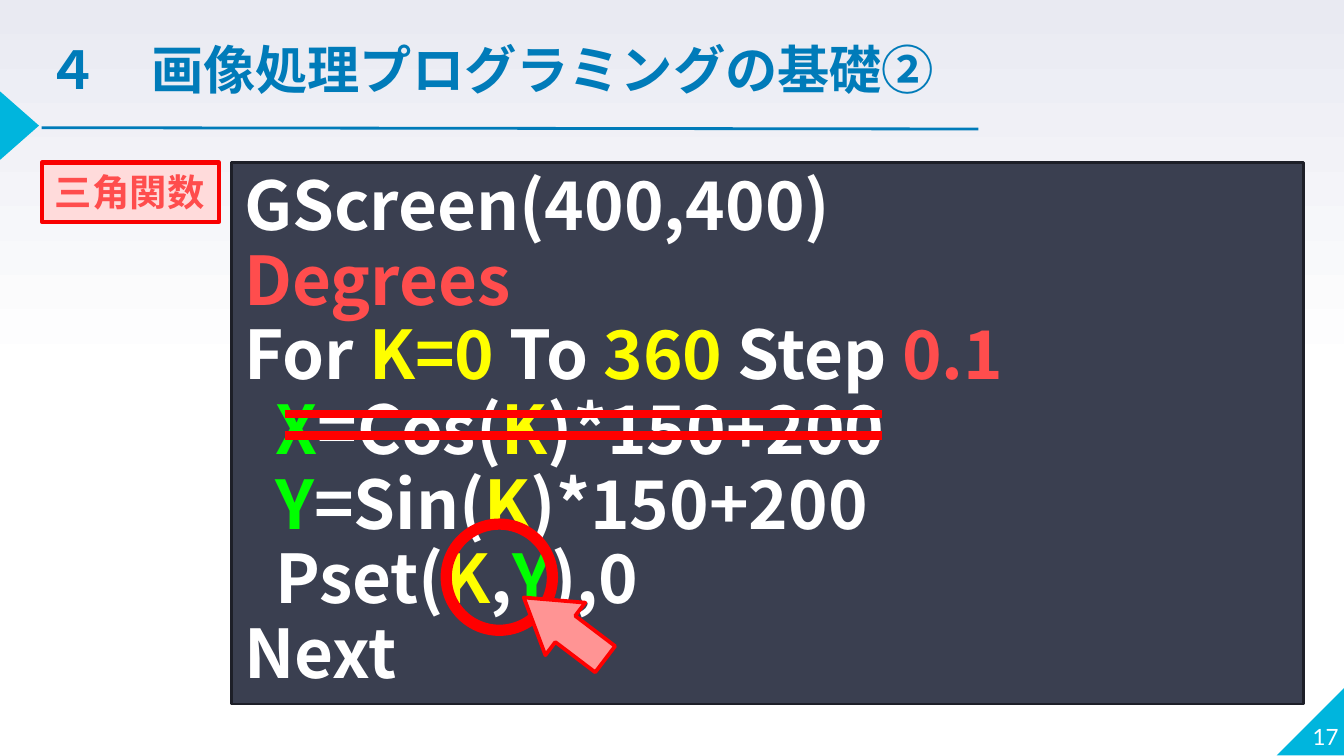
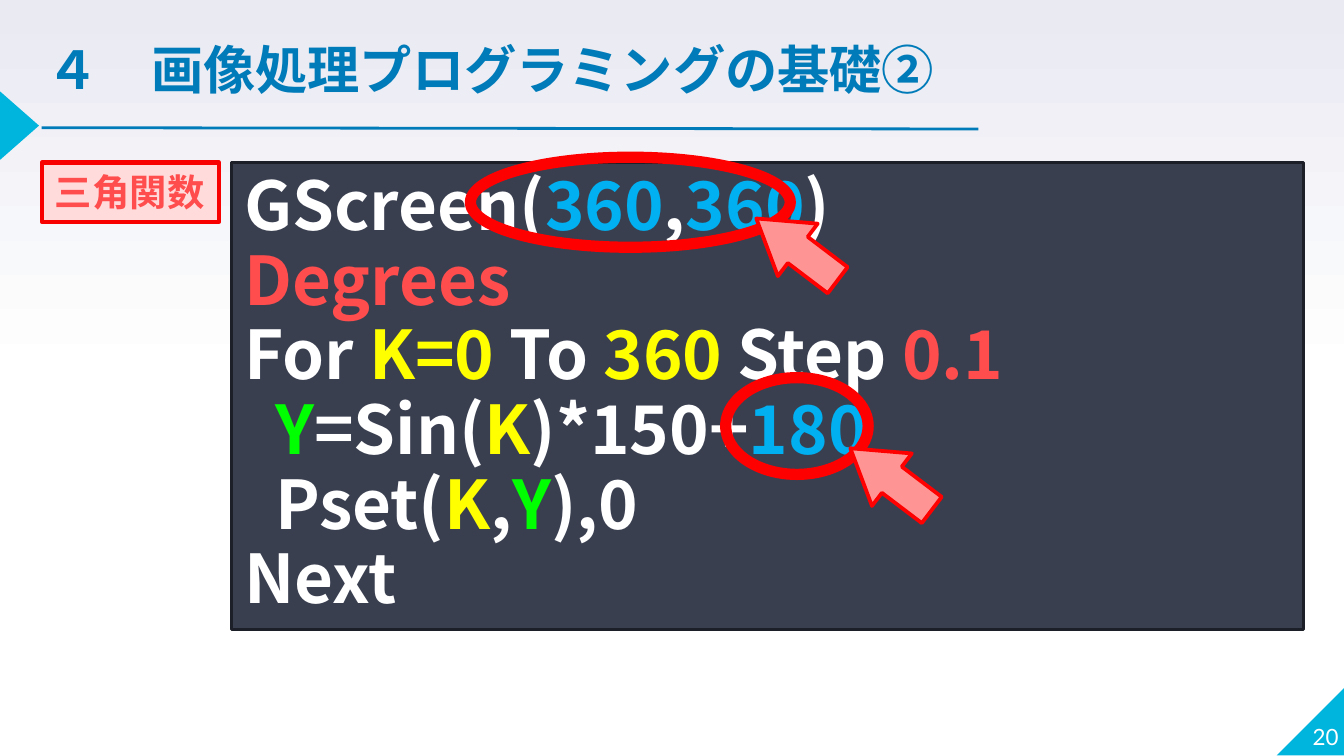
from copy import deepcopy

from lxml import etree
from pptx import Presentation
from pptx.dml.color import RGBColor
from pptx.enum.shapes import MSO_CONNECTOR, MSO_SHAPE
from pptx.enum.text import MSO_ANCHOR, MSO_AUTO_SIZE, PP_ALIGN
from pptx.oxml.ns import qn
from pptx.util import Inches, Pt

RECT, ELLIPSE = MSO_SHAPE.RECTANGLE, MSO_SHAPE.OVAL
ARROW = MSO_SHAPE.RIGHT_ARROW
CORNER, MARKER = MSO_SHAPE.RIGHT_TRIANGLE, MSO_SHAPE.ISOSCELES_TRIANGLE
STRAIGHT = MSO_CONNECTOR.STRAIGHT
LEFT, RIGHT = PP_ALIGN.LEFT, PP_ALIGN.RIGHT
BOTTOM, TOP = MSO_ANCHOR.BOTTOM, MSO_ANCHOR.TOP
GROW = MSO_AUTO_SIZE.SHAPE_TO_FIT_TEXT

COLORS = {
    "white": "FFFFFF", "sky": "E9EAF2", "cyan": "00B5DD", "title": "007BB9",
    "panel": "3A3F50", "panel_edge": "1D1F28", "tag": "FFDBDB",
    "tag_edge": "F90000", "coral": "FF4D4D", "yellow": "FFFF00",
    "green": "00FF00", "blue": "00B0F0", "red": "FF0000", "arrow": "FF9494",
}
JP = "Noto Sans CJK JP"
FONTS = {
    "title": {"name": JP, "size": Pt(28), "bold": True},
    "code": {"name": JP, "size": Pt(36), "bold": True},
    "tag": {"name": JP, "size": Pt(20), "bold": True},
    "page": {"name": "Lato", "size": Pt(12)},
}
FLUSH = dict.fromkeys(
    ("margin_left", "margin_top", "margin_right", "margin_bottom"), 0)
LINE_PT = 40
INDENT = Inches(0.23)

DEGREES = (False, [("Degrees", "coral")])
LOOP = (False, [("For ", "white"), ("K=0", "yellow"), (" To ", "white"),
                ("360", "yellow"), (" Step ", "white"), ("0.1", "coral")])
PSET = (True, [("Pset(", "white"), ("K", "yellow"), (",", "white"),
               ("Y", "green"), ("),0", "white")])
NEXT = (False, [("Next", "white")])


def assign(name, func, *tail):
    return (True, [(name, "green"), (f"={func}(", "white"),
                   ("K", "yellow"), *tail])


def rgb(name):
    return RGBColor.from_string(COLORS[name])


def apply(obj, values):
    for key, value in values.items():
        setattr(obj, key, value)


def add_shape(shapes, kind, box, fill=None, edge=None, width=0):
    sp = shapes.add_shape(kind, *map(Inches, box))
    sp.shadow.inherit = False
    if fill:
        sp.fill.solid()
        sp.fill.fore_color.rgb = rgb(fill)
    else:
        sp.fill.background()
    if edge:
        sp.line.color.rgb = rgb(edge)
        sp.line.width = Pt(width)
    else:
        sp.line.fill.background()
    return sp


def add_line(shapes, start, end, color, width):
    line = shapes.add_connector(STRAIGHT, *map(Inches, (*start, *end)))
    line.line.color.rgb = rgb(color)
    line.line.width = Pt(width)
    etree.SubElement(line.element.spPr, qn("a:effectLst"))


def add_runs(p, runs, style):
    for text, color in runs:
        r = p.add_run()
        r.text = text
        apply(r.font, FONTS[style])
        r.font.color.rgb = rgb(color)
        ea = etree.SubElement(r._r.get_or_add_rPr(), qn("a:ea"))
        ea.set("typeface", FONTS[style]["name"])


def set_text(sp, text, color, style, align=LEFT, **frame):
    tf = sp.text_frame
    apply(tf, {"word_wrap": True, **frame})
    p = tf.paragraphs[0]
    p.alignment = align
    add_runs(p, [(text, color)], style)


def background(s):
    fill = s.background.fill
    fill.gradient()
    fill.gradient_angle = 90
    gs_list = s.element.find(".//" + qn("a:gsLst"))
    gs_list.insert(0, deepcopy(gs_list[0]))
    stops = [(0, "white"), (0.5, "white"), (1, "sky")]
    for stop, (position, color) in zip(fill.gradient_stops, stops):
        stop.position = position
        stop.color.rgb = rgb(color)


def frame(s, page):
    background(s)
    corner = add_shape(s.shapes, CORNER, (9.5, 5.11, 0.51, 0.51), "cyan")
    corner.element.spPr.xfrm.set("flipH", "1")
    marker = add_shape(s.shapes, MARKER, (-0.11, 0.79, 0.51, 0.29), "cyan")
    marker.rotation = 90
    number = s.shapes.add_textbox(*map(Inches, (9.46, 5.07, 0.5, 0.51)))
    set_text(number, str(page), "white", "page", RIGHT,
             vertical_anchor=BOTTOM, **FLUSH)


def header(s, box):
    x, y, w, h = box
    title = s.shapes.add_textbox(*map(Inches, box))
    set_text(title, "４　画像処理プログラミングの基礎②", "title", "title",
             vertical_anchor=TOP, auto_size=GROW)
    add_line(s.shapes, (x + 0.06, y + 0.72), (x + 7.03, y + 0.73),
             "title", 1.5)


def code_panel(s, box, rows):
    x, y, w = box
    h = 0.14 + len(rows) * LINE_PT / 72
    panel = add_shape(s.shapes, RECT, (x, y, w, h), "panel", "panel_edge", 1.5)
    tf = panel.text_frame
    apply(tf, {"word_wrap": True, "auto_size": GROW, "vertical_anchor": TOP})
    for i, (indented, runs) in enumerate(rows):
        p = tf.add_paragraph() if i else tf.paragraphs[0]
        apply(p, {"alignment": LEFT, "line_spacing": Pt(LINE_PT)})
        if indented:
            p._p.get_or_add_pPr().set("marL", str(INDENT))
        add_runs(p, runs, "code")


def topic_tag(s, box):
    tag = add_shape(s.shapes, RECT, box, "tag", "tag_edge", 2.25)
    set_text(tag, "三角関数", "coral", "tag", word_wrap=False,
             auto_size=GROW, vertical_anchor=TOP)


def strike(s, box):
    x, y, w, gap = box
    shapes = s.shapes.add_group_shape().shapes
    for top in (y, y + gap):
        add_line(shapes, (x, top), (x + w, top), "red", 4.5)


def callout(s, ring, arrow_offset):
    x, y, w, h = ring
    dx, dy = arrow_offset
    shapes = s.shapes.add_group_shape().shapes
    add_shape(shapes, ELLIPSE, ring, edge="red", width=6)
    arrow = add_shape(shapes, ARROW, (x + dx, y + dy, 0.76, 0.49),
                      "arrow", "red", 2)
    arrow.rotation = 217.2
    arrow.adjustments[0] = 0.5
    arrow.adjustments[1] = 0.79


def code_slide(prs, page, rows, callouts, strike_box=None):
    s = prs.slides.add_slide(prs.slide_layouts[6])
    frame(s, page)
    header(s, (0.25, 0.23, 7.39, 0.57))
    code_panel(s, (1.72, 1.21, 7.98), rows)
    topic_tag(s, (0.31, 1.21, 1.32, 0.44))
    if strike_box:
        strike(s, strike_box)
    for ring, arrow_offset in callouts:
        callout(s, ring, arrow_offset)


def main():
    prs = Presentation()
    prs.slide_width, prs.slide_height = Inches(10), Inches(10 * 9 / 16)
    tail = (")*150+200", "white")
    code_slide(
        prs, 17,
        [(False, [("GScreen(400,400)", "white")]), DEGREES, LOOP,
         assign("X", "Cos", tail), assign("Y", "Sin", tail), PSET, NEXT],
        [((3.32, 3.9, 0.79, 0.79), (0.5, 0.53))],
        (2.12, 3.08, 4.44, 0.16))
    code_slide(
        prs, 20,
        [(False, [("GScreen(", "white"), ("360", "blue"), (",", "white"),
                  ("360", "blue"), (")", "white")]), DEGREES, LOOP,
         assign("Y", "Sin", (")*150+", "white"), ("180", "blue")),
         PSET, NEXT],
        [((3.5, 1.17, 2.38, 0.67), (2.05, 0.44)),
         ((5.4, 2.81, 1.06, 0.72), (0.85, 0.51))])
    prs.save("out.pptx")


if __name__ == "__main__":
    main()
